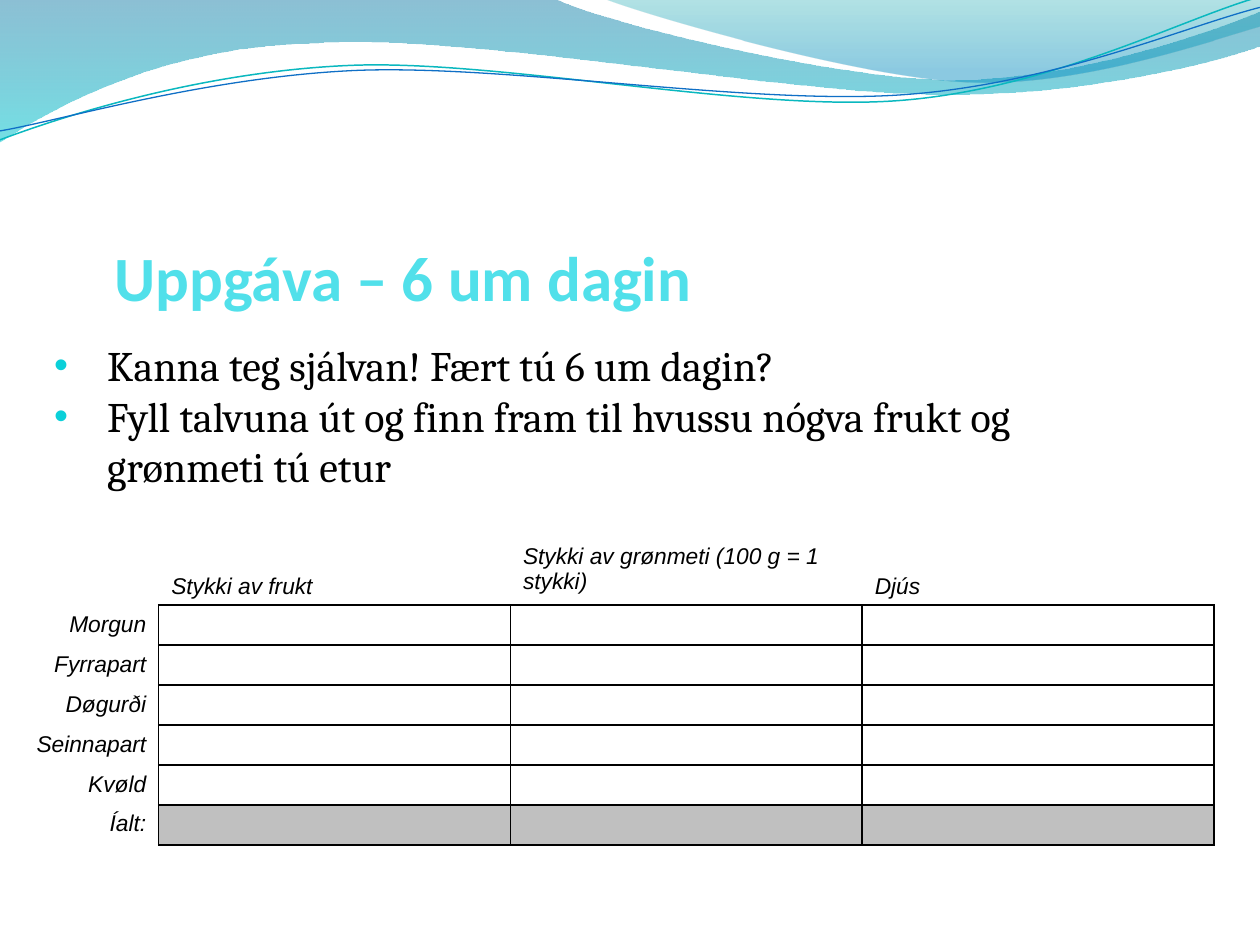
from dataclasses import dataclass
from typing import NamedTuple, Optional

from lxml.etree import SubElement
from pptx import Presentation
from pptx.dml.color import RGBColor
from pptx.enum.text import MSO_ANCHOR as Anchor, PP_ALIGN as Align
from pptx.oxml.ns import qn
from pptx.util import Cm, Pt

BLACK = RGBColor(0x00, 0x00, 0x00)
TITLE_AQUA = RGBColor(0x51, 0xE0, 0xEA)
BULLET_TEAL = RGBColor(0x0B, 0xD0, 0xD9)
TOTAL_GREY = RGBColor(0xC0, 0xC0, 0xC0)
DEEP_BLUE = RGBColor(0x00, 0x74, 0xA1)
CYAN = RGBColor(0x00, 0xC6, 0xCF)
SEA_GREEN = RGBColor(0x00, 0xA1, 0xA9)
SKY_BLUE = RGBColor(0x00, 0x8B, 0xBF)
LINE_TEAL = RGBColor(0x0A, 0xB8, 0xBF)
LINE_BLUE = RGBColor(0x0F, 0x6F, 0xC6)

INDENT = Cm(1.07)


class Stop(NamedTuple):
    position: float
    color: RGBColor
    opacity: int


@dataclass
class Wave:
    start: tuple
    segments: list
    stops: Optional[list] = None
    color: Optional[RGBColor] = None
    weight: float = 0


@dataclass
class Style:
    font: str
    size: float
    color: RGBColor = BLACK
    bold: bool = False
    italic: bool = False


TITLE = Style("Calibri", 36, TITLE_AQUA, bold=True)
BODY = Style("Cambria", 24)
TABLE = Style("Arial", 13, italic=True)

WAVES = [
    Wave((0, 0), [
        (11.18, -0.03),
        (12.09, 0.43, 16.87, 1.6, 19.25, 1.6),
        (21.67, 1.6, 24.33, 0.66, 25.4, 0.23),
        (25.43, 0.91),
        (24.97, 1.12, 22.1, 1.93, 18.95, 1.9),
        (15.8, 1.9, 9.7, 0.71, 6.53, 0.86),
        (3.28, 0.91, 1.17, 2.11, -0.03, 2.87),
        (0, 0),
    ], stops=[Stop(0, DEEP_BLUE, 45), Stop(1, CYAN, 55)]),
    Wave((12.17, -0.03), [
        (12.93, 0.28, 17.32, 1.57, 19.53, 1.65),
        (21.74, 1.75, 24.41, 0.81, 25.4, 0.53),
        (25.4, 0),
        (12.17, -0.03),
    ], stops=[Stop(0, SEA_GREEN, 30), Stop(0.8, SKY_BLUE, 45)]),
    Wave((0, 2.82), [
        (1.22, 2.36, 4.01, 1.45, 7.04, 1.32),
        (10.03, 1.19, 15.06, 2.26, 18.11, 2.03),
        (21.16, 1.8, 23.83, 0.38, 25.35, -0.05),
    ], color=LINE_TEAL, weight=0.85),
    Wave((0, 2.64), [
        (1.19, 2.44, 4.17, 1.55, 7.19, 1.42),
        (10.24, 1.3, 15.16, 2.13, 18.21, 1.91),
        (21.23, 1.7, 23.9, 0.53, 25.4, 0.15),
    ], color=LINE_BLUE, weight=0.75),
]

TASKS = [
    "Kanna teg sjálvan! Fært tú 6 um dagin?",
    "Fyll talvuna út og finn fram til hvussu nógva frukt og grønmeti tú etur",
]
PORTIONS = ["Stykki av frukt", "Stykki av grønmeti (100 g = 1 stykki)", "Djús"]
MEALS = ["Morgun", "Fyrrapart", "Døgurði", "Seinnapart", "Kvøld", "Íalt:"]


def bend(outline, segments: list) -> None:
    steps = iter(list(outline.iter(qn("a:lnTo"))))
    for segment in segments:
        first, *others = [next(steps) for _ in range(len(segment) // 2)]
        if others:
            first.tag = qn("a:cubicBezTo")
            for step in others:
                first.append(step[0])
                step.getparent().remove(step)


def draw_wave(slide, wave: Wave) -> None:
    builder = slide.shapes.build_freeform(Cm(wave.start[0]), Cm(wave.start[1]))
    points = [(Cm(x), Cm(y)) for segment in wave.segments
              for x, y in zip(segment[::2], segment[1::2])]
    builder.add_line_segments(points, close=wave.stops is not None)
    band = builder.convert_to_shape()
    bend(band._element, wave.segments)
    band.shadow.inherit = False
    if wave.stops is None:
        band.fill.background()
        band.line.color.rgb = wave.color
        band.line.width = Pt(wave.weight)
        return
    band.line.fill.background()
    band.fill.gradient()
    band.fill.gradient_angle = 270
    for target, stop in zip(band.fill.gradient_stops, wave.stops):
        target.position = stop.position
        target.color.rgb = stop.color
        SubElement(target._gs[0], qn("a:alpha"), val=str(stop.opacity * 1000))


def write(paragraph, text: str, style: Style) -> None:
    run = paragraph.add_run()
    run.text = text
    font = run.font
    font.name, font.size = style.font, Pt(style.size)
    font.bold, font.italic = style.bold, style.italic
    font.color.rgb = style.color


def add_frame(slide, left: float, top: float, width: float, height: float,
              inset: float, anchor: Anchor):
    frame = slide.shapes.add_textbox(Cm(left), Cm(top), Cm(width), Cm(height)).text_frame
    frame.word_wrap = True
    frame.vertical_anchor = anchor
    frame.margin_left, frame.margin_right = 0, Cm(0.05)
    frame.margin_top = frame.margin_bottom = Cm(inset)
    return frame


def add_bullet(paragraph) -> None:
    properties = paragraph._p.get_or_add_pPr()
    properties.set("marL", str(INDENT))
    properties.set("indent", str(-INDENT))
    color = SubElement(properties, qn("a:buClr"))
    SubElement(color, qn("a:srgbClr"), val=str(BULLET_TEAL))
    SubElement(properties, qn("a:buSzPct"), val="95000")
    SubElement(properties, qn("a:buFont"), typeface="Arial")
    SubElement(properties, qn("a:buChar"), char="•")


def set_borders(cell, ruled: str) -> None:
    properties = cell._tc.get_or_add_tcPr()
    for side in "LRTB":
        edge = SubElement(properties, qn(f"a:ln{side}"), w=str(Pt(1)))
        if side in ruled:
            fill = SubElement(edge, qn("a:solidFill"))
            SubElement(fill, qn("a:srgbClr"), val=str(BLACK))
        else:
            SubElement(edge, qn("a:noFill"))


def size_empty(paragraph, style: Style) -> None:
    ending = SubElement(paragraph._p, qn("a:endParaRPr"), sz=str(style.size * 100))
    SubElement(ending, qn("a:latin"), typeface=style.font)


def draw_table(slide) -> None:
    rows, columns = len(MEALS) + 1, len(PORTIONS) + 1
    table = slide.shapes.add_table(rows, columns, 0, Cm(10.83), Cm(24.47), Cm(6.11)).table
    table.first_row = table.horz_banding = False
    for index, column in enumerate(table.columns):
        column.width = Cm(7.09 if index else 3.2)
    for index, row in enumerate(table.rows):
        row.height = Cm(0.79 if index else 1.37)
    for r in range(rows):
        for c in range(columns):
            cell = table.cell(r, c)
            set_borders(cell, "LRTB" if r and c else "R" if r else "B" if c else "")
            if r == rows - 1 and c:
                cell.fill.solid()
                cell.fill.fore_color.rgb = TOTAL_GREY
            else:
                cell.fill.background()
            paragraph = cell.text_frame.paragraphs[0]
            if c and not r:
                write(paragraph, PORTIONS[c - 1], TABLE)
                cell.vertical_anchor = Anchor.TOP if c == 2 else Anchor.BOTTOM
            elif r and not c:
                write(paragraph, MEALS[r - 1], TABLE)
                paragraph.alignment = Align.RIGHT
            else:
                size_empty(paragraph, TABLE)


def main() -> None:
    deck = Presentation()
    deck.slide_width, deck.slide_height = Cm(25.4), Cm(19.05)
    slide = deck.slides.add_slide(deck.slide_layouts[6])
    for wave in WAVES:
        draw_wave(slide, wave)
    heading = add_frame(slide, 2.31, 3.82, 20.98, 2.51, 0, Anchor.BOTTOM)
    write(heading.paragraphs[0], "Uppgáva – 6 um dagin", TITLE)
    tasks = add_frame(slide, 1.09, 6.72, 22.2, 11, 0.13, Anchor.TOP)
    for index, task in enumerate(TASKS):
        paragraph = tasks.add_paragraph() if index else tasks.paragraphs[0]
        add_bullet(paragraph)
        write(paragraph, task, BODY)
    draw_table(slide)
    deck.save("out.pptx")


if __name__ == "__main__":
    main()
